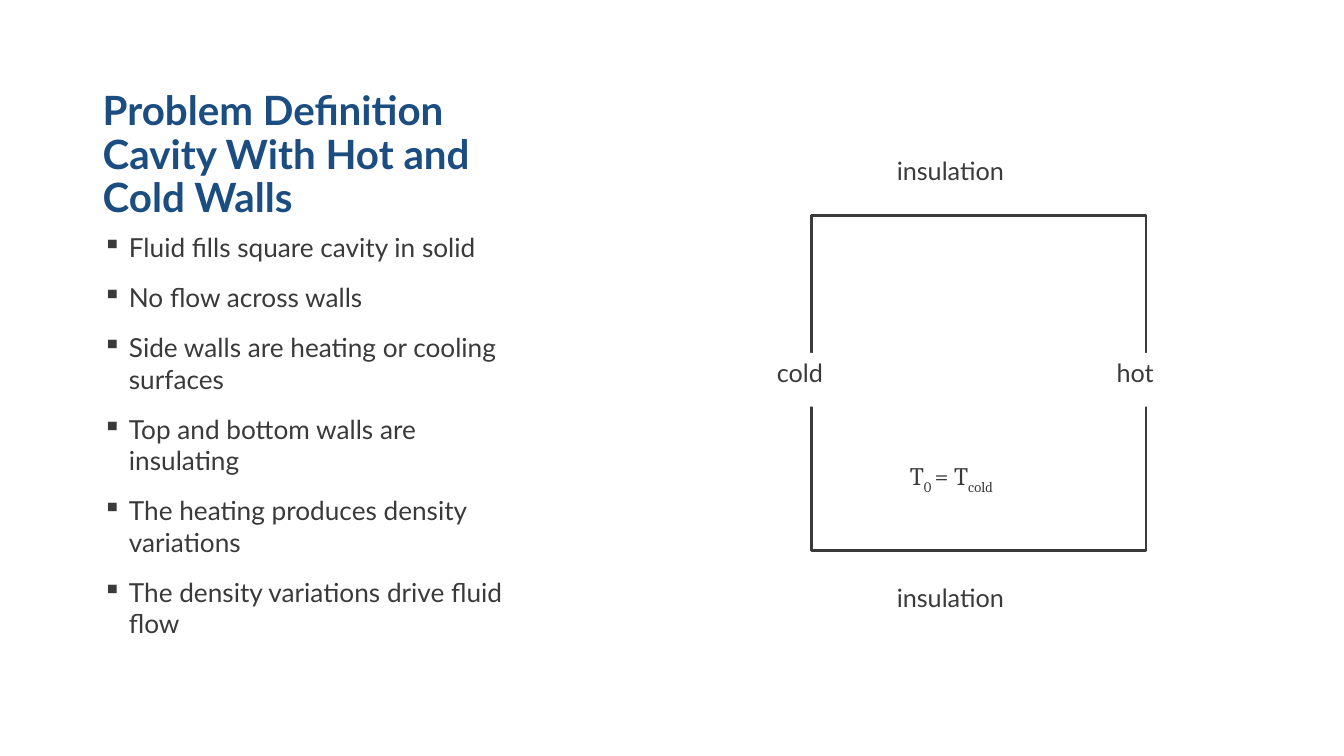
from pptx import Presentation
from pptx.dml.color import RGBColor
from pptx.enum.shapes import MSO_SHAPE
from pptx.enum.text import MSO_ANCHOR, PP_ALIGN
from pptx.oxml.ns import qn
from pptx.util import Cm, Pt
from lxml import etree

RECT = MSO_SHAPE.RECTANGLE
TOP, BOTTOM = MSO_ANCHOR.TOP, MSO_ANCHOR.BOTTOM
LEFT = PP_ALIGN.LEFT

# Content
TITLE = ["Problem Definition", "Cavity With Hot and Cold Walls"]
POINTS = [
    "Fluid fills square cavity in solid",
    "No flow across walls",
    "Side walls are heating or cooling surfaces",
    "Top and bottom walls are insulating",
    "The heating produces density variations",
    "The density variations drive fluid flow",
]
WALL_LABELS = [  # text, left, top, width in cm
    ("cold", 19.33, 8.89, 2.24),
    ("hot", 27.89, 8.89, 2.06),
    ("insulation", 22.35, 14.55, 4.22),
    ("insulation", 22.35, 3.78, 4.22),
]
FORMULA = [("T", 0), ("0 ", -25), ("= T", 0), ("cold", -25)]  # text, baseline %

# Layout in cm
TEXT_X, TEXT_W = 2.34, 10.92
TITLE_Y, TITLE_H = 2.74, 2.97
BODY_H = 11.71
CAVITY_X, CAVITY_Y, CAVITY_SIDE = 20.45, 5.44, 8.43
LABEL_H = 1.36
FORMULA_X, FORMULA_Y, FORMULA_W = 22.68, 11.48, 3.99
BULLET_INDENT = Cm(0.66)

# Formats
BLUE, GREY, WHITE = "1B4D81", "393A39", "FFFFFF"
TITLE_FONT = {"name": "Lato", "size": Pt(28.8), "bold": True}
BODY_FONT = {"name": "Lato", "size": Pt(18.7)}
LABEL_FONT = {"name": "Lato", "size": Pt(18)}
FORMULA_FONT = {"name": "Cambria", "size": Pt(18)}


def set_color(color_format, value):
    color_format.rgb = RGBColor.from_string(value)


def add_run(p, text, font, color=GREY):
    r = p.add_run()
    r.text = text
    for key, value in font.items():
        setattr(r.font, key, value)
    set_color(r.font.color, color)
    return r


def add_text_box(s, y, h, anchor):
    tf = s.shapes.add_textbox(Cm(TEXT_X), Cm(y), Cm(TEXT_W), Cm(h)).text_frame
    tf.word_wrap = True
    tf.vertical_anchor = anchor
    return tf


def add_rect(s, x, y, w, h):
    sp = s.shapes.add_shape(RECT, Cm(x), Cm(y), Cm(w), Cm(h))
    sp.shadow.inherit = False
    return sp


def add_label(s, x, y, w):
    sp = add_rect(s, x, y, w, LABEL_H)
    sp.fill.solid()
    set_color(sp.fill.fore_color, WHITE)
    sp.line.fill.background()
    tf = sp.text_frame
    tf.word_wrap = True
    tf.vertical_anchor = TOP
    p = tf.paragraphs[0]
    p.alignment = LEFT
    return p


def add_bullet(p):
    pPr = p._p.get_or_add_pPr()
    pPr.set("marL", str(BULLET_INDENT))
    pPr.set("indent", str(-BULLET_INDENT))
    etree.SubElement(pPr, qn("a:buChar")).set("char", "▪")


def main():
    prs = Presentation()
    prs.slide_width, prs.slide_height = Cm(33.87), Cm(19.05)
    s = prs.slides.add_slide(prs.slide_layouts[6])

    # Title
    p = add_text_box(s, TITLE_Y, TITLE_H, BOTTOM).paragraphs[0]
    p.line_spacing = 0.9
    for i, line in enumerate(TITLE):
        if i:
            p.add_line_break()
        add_run(p, line, TITLE_FONT, BLUE)

    # Bullet list
    tf = add_text_box(s, TITLE_Y + TITLE_H, BODY_H, TOP)
    for i, point in enumerate(POINTS):
        p = tf.add_paragraph() if i else tf.paragraphs[0]
        add_bullet(p)
        p.space_before = Pt(13.3 if i else 0)
        add_run(p, point, BODY_FONT)

    # Cavity
    cavity = add_rect(s, CAVITY_X, CAVITY_Y, CAVITY_SIDE, CAVITY_SIDE)
    cavity.fill.background()
    set_color(cavity.line.color, GREY)
    cavity.line.width = Pt(2)

    # Wall labels, which interrupt the walls
    for text, x, y, w in WALL_LABELS:
        add_run(add_label(s, x, y, w), text, LABEL_FONT)

    # Initial temperature
    p = add_label(s, FORMULA_X, FORMULA_Y, FORMULA_W)
    for text, baseline in FORMULA:
        r = add_run(p, text, FORMULA_FONT)
        if baseline:
            r._r.get_or_add_rPr().set("baseline", str(baseline * 1000))

    prs.save("out.pptx")


if __name__ == "__main__":
    main()
